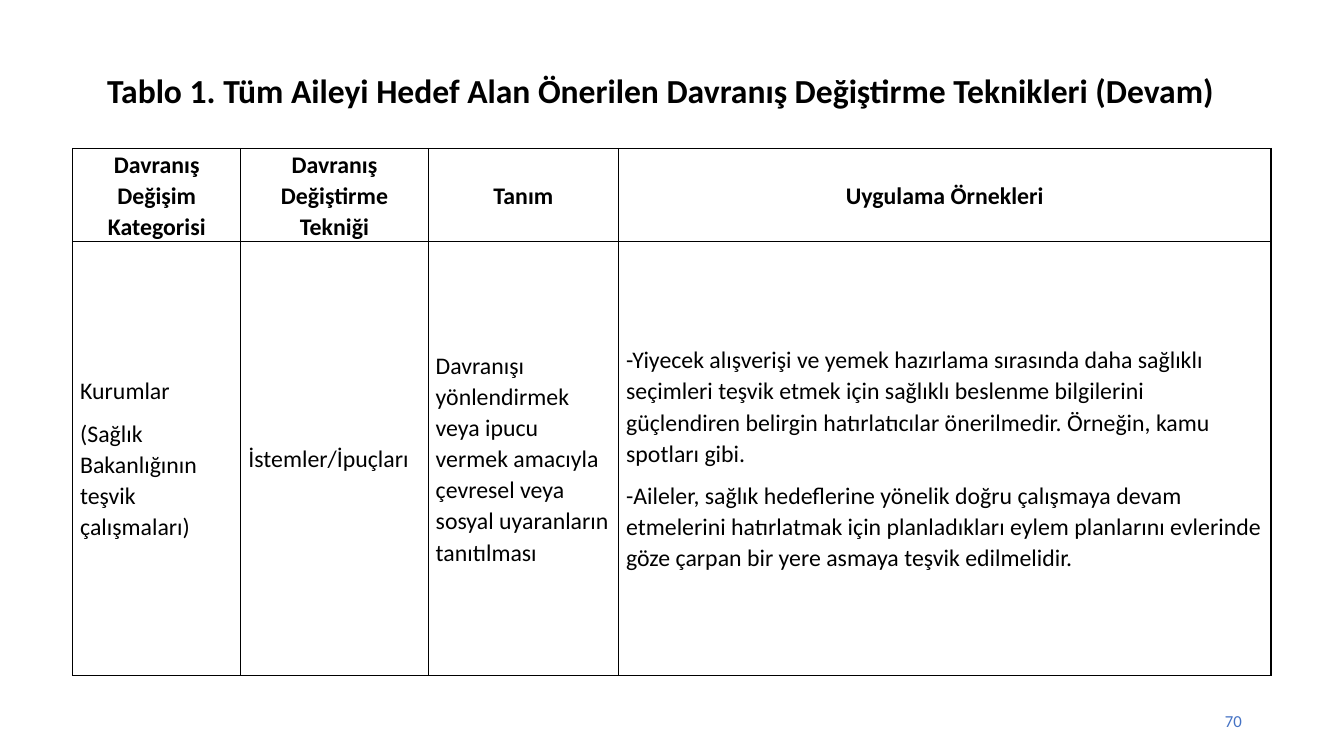
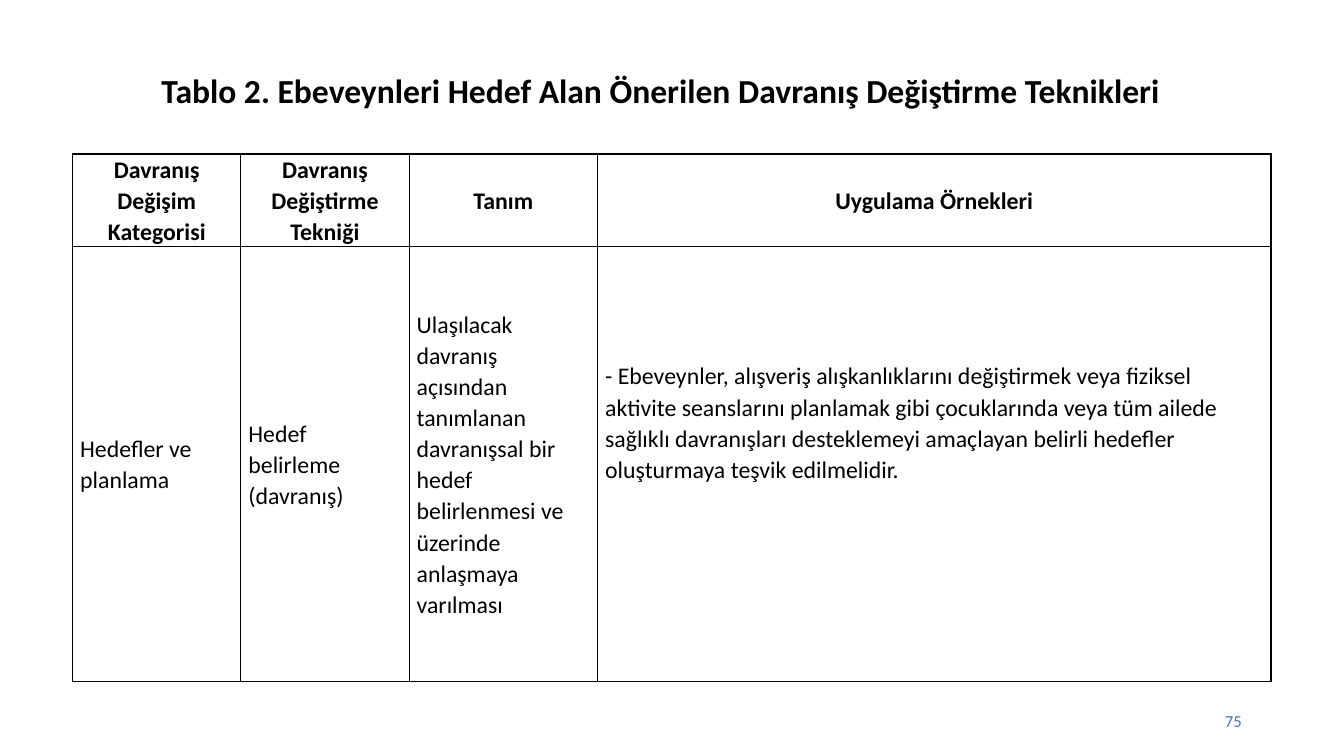
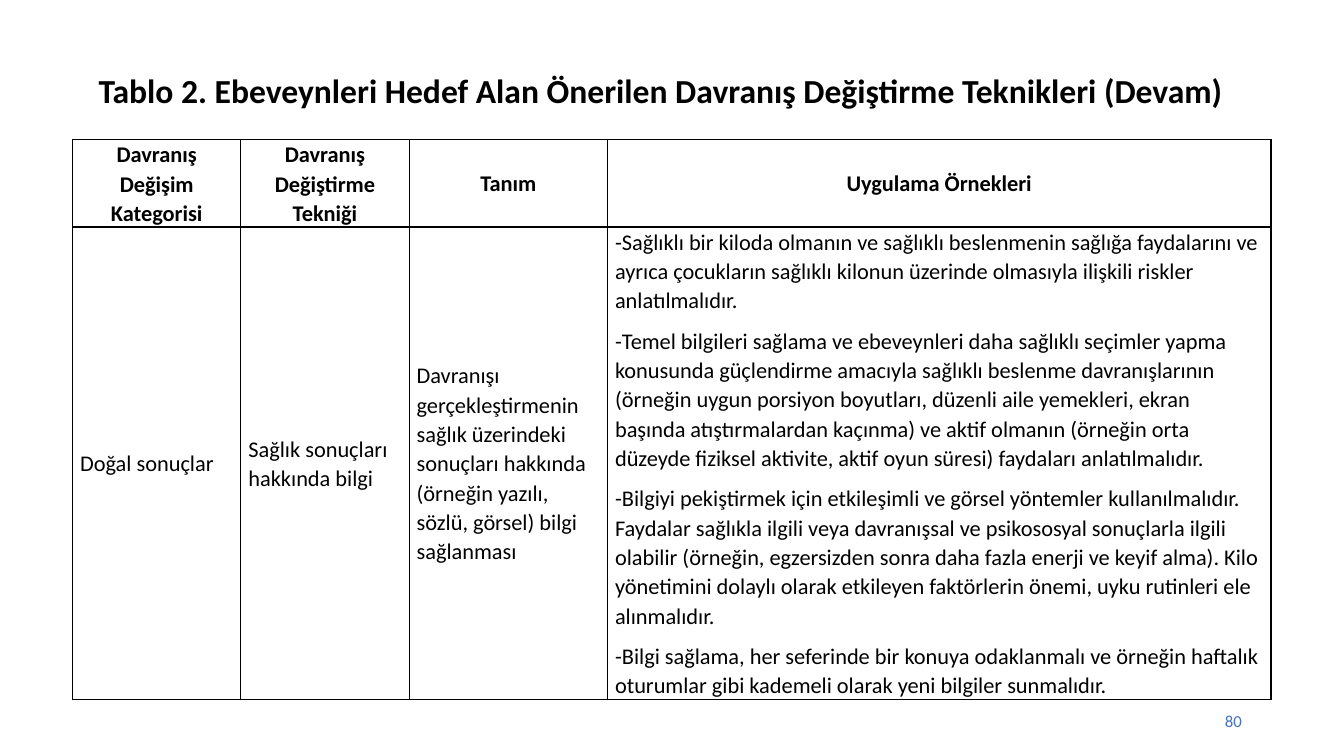
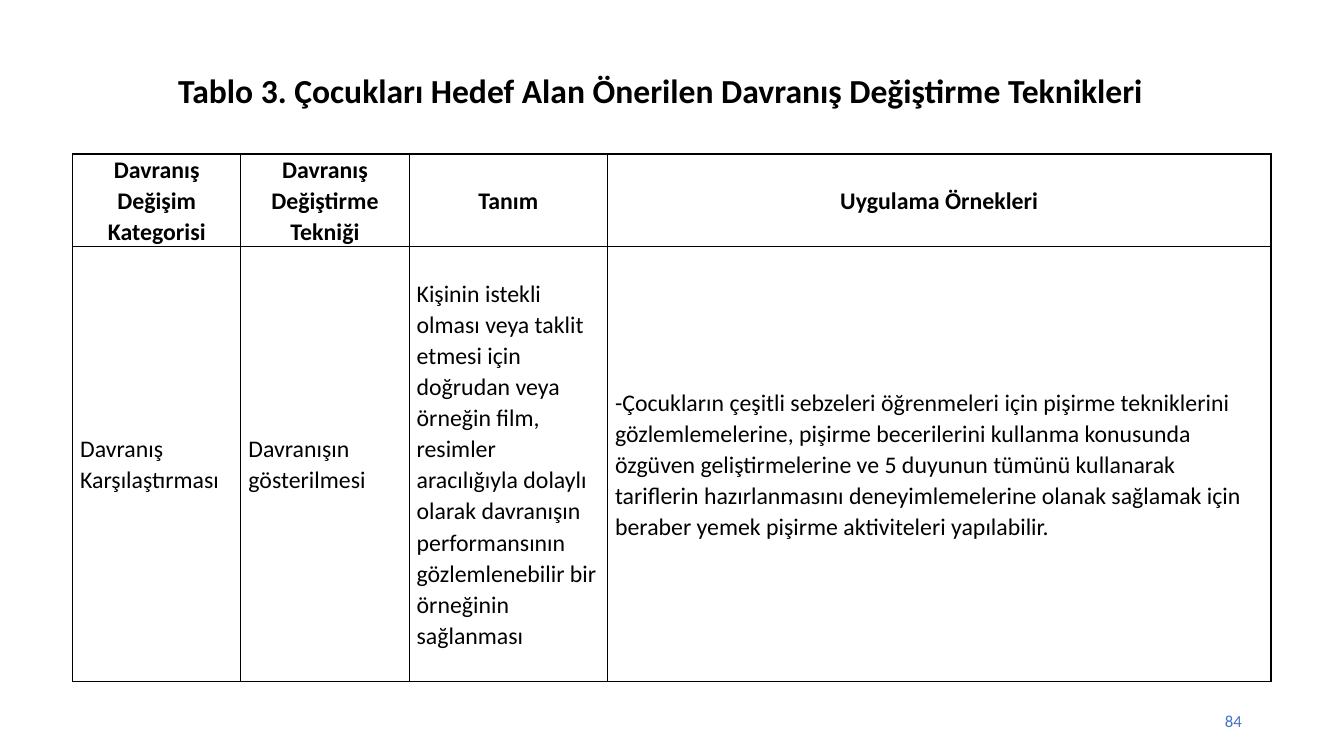
from lxml import etree
from pptx import Presentation
from pptx.dml.color import RGBColor
from pptx.enum.text import MSO_ANCHOR, PP_ALIGN
from pptx.oxml.ns import qn
from pptx.util import Cm, Pt

MIDDLE = MSO_ANCHOR.MIDDLE
LEFT, CENTER, RIGHT = PP_ALIGN.LEFT, PP_ALIGN.CENTER, PP_ALIGN.RIGHT

COLORS = {"text": "000000", "border": "000000", "page": "4472C4"}
FONT = "Calibri"
BORDER_WIDTH = Pt(1)
TABLE_LEFT, TABLE_WIDTH = 1.83, 30.2
SIDE_MARGIN = 0.19

HEADERS = [
    "Davranış Değişim Kategorisi",
    "Davranış Değiştirme Tekniği",
    "Tanım",
    "Uygulama Örnekleri",
]

SLIDES = [
    {
        "title": "Tablo 1. Tüm Aileyi Hedef Alan Önerilen Davranış Değiştirme Teknikleri (Devam)",
        "page": "70",
        "top": 3.74,
        "columns": [4.24, 4.72, 4.8],
        "body": [
            ["Kurumlar", "(Sağlık Bakanlığının teşvik çalışmaları)"],
            ["İstemler/İpuçları"],
            ["Davranışı yönlendirmek veya ipucu vermek amacıyla çevresel veya sosyal "
             "uyaranların tanıtılması"],
            ["-Yiyecek alışverişi ve yemek hazırlama sırasında daha sağlıklı seçimleri "
             "teşvik etmek için sağlıklı beslenme bilgilerini güçlendiren belirgin "
             "hatırlatıcılar önerilmedir. Örneğin, kamu spotları gibi.",
             "-Aileler, sağlık hedeflerine yönelik doğru çalışmaya devam etmelerini "
             "hatırlatmak için planladıkları eylem planlarını evlerinde göze çarpan bir "
             "yere asmaya teşvik edilmelidir."],
        ],
    },
    {
        "title": "Tablo 2. Ebeveynleri Hedef Alan Önerilen Davranış Değiştirme Teknikleri",
        "page": "75",
        "top": 3.88,
        "columns": [4.24, 4.24, 4.75],
        "examples_bottom": 2.1,
        "body": [
            ["Hedefler ve planlama"],
            ["Hedef belirleme (davranış)"],
            ["Ulaşılacak davranış açısından tanımlanan davranışsal bir hedef "
             "belirlenmesi ve üzerinde anlaşmaya varılması"],
            ["- Ebeveynler, alışveriş alışkanlıklarını değiştirmek veya fiziksel "
             "aktivite seanslarını planlamak gibi çocuklarında veya tüm ailede sağlıklı "
             "davranışları desteklemeyi amaçlayan belirli hedefler oluşturmaya teşvik "
             "edilmelidir."],
        ],
    },
    {
        "title": "Tablo 2. Ebeveynleri Hedef Alan Önerilen Davranış Değiştirme Teknikleri (Devam)",
        "page": "80",
        "top": 3.52,
        "columns": [4.24, 4.24, 5],
        "rows": [2.2, 11.9],
        "size": 16,
        "body": [
            ["Doğal sonuçlar"],
            ["Sağlık sonuçları hakkında bilgi"],
            ["Davranışı gerçekleştirmenin sağlık üzerindeki sonuçları hakkında "
             "(örneğin yazılı, sözlü, görsel) bilgi sağlanması"],
            ["-Sağlıklı bir kiloda olmanın ve sağlıklı beslenmenin sağlığa faydalarını "
             "ve ayrıca çocukların sağlıklı kilonun üzerinde olmasıyla ilişkili riskler "
             "anlatılmalıdır.",
             "-Temel bilgileri sağlama ve ebeveynleri daha sağlıklı seçimler yapma "
             "konusunda güçlendirme amacıyla sağlıklı beslenme davranışlarının (örneğin "
             "uygun porsiyon boyutları, düzenli aile yemekleri, ekran başında "
             "atıştırmalardan kaçınma) ve aktif olmanın (örneğin orta düzeyde fiziksel "
             "aktivite, aktif oyun süresi) faydaları anlatılmalıdır.",
             "-Bilgiyi pekiştirmek için etkileşimli ve görsel yöntemler kullanılmalıdır. "
             "Faydalar sağlıkla ilgili veya davranışsal ve psikososyal sonuçlarla ilgili "
             "olabilir (örneğin, egzersizden sonra daha fazla enerji ve keyif alma). "
             "Kilo yönetimini dolaylı olarak etkileyen faktörlerin önemi, uyku rutinleri "
             "ele alınmalıdır.",
             "-Bilgi sağlama, her seferinde bir konuya odaklanmalı ve örneğin haftalık "
             "oturumlar gibi kademeli olarak yeni bilgiler sunmalıdır."],
        ],
    },
    {
        "title": "Tablo 3. Çocukları Hedef Alan Önerilen Davranış Değiştirme Teknikleri",
        "page": "84",
        "top": 3.88,
        "columns": [4.24, 4.24, 5],
        "body": [
            ["Davranış Karşılaştırması"],
            ["Davranışın gösterilmesi"],
            ["Kişinin istekli olması veya taklit etmesi için doğrudan veya örneğin film, "
             "resimler aracılığıyla dolaylı olarak davranışın performansının "
             "gözlemlenebilir bir örneğinin sağlanması"],
            ["-Çocukların çeşitli sebzeleri öğrenmeleri için pişirme tekniklerini "
             "gözlemlemelerine, pişirme becerilerini kullanma konusunda özgüven "
             "geliştirmelerine ve 5 duyunun tümünü kullanarak tariflerin hazırlanmasını "
             "deneyimlemelerine olanak sağlamak için beraber yemek pişirme aktiviteleri "
             "yapılabilir."],
        ],
    },
]


def write(frame, paragraphs, size, align, color="text", bold=False, spacing=1.0, after=0):
    frame.word_wrap = True
    frame.text = "\n".join(paragraphs)
    for paragraph in frame.paragraphs:
        paragraph.alignment = align
        paragraph.line_spacing = spacing
        paragraph.space_after = Pt(after)
        for run in paragraph.runs:
            run.font.name = FONT
            run.font.size = Pt(size)
            run.font.bold = bold
            run.font.color.rgb = RGBColor.from_string(COLORS[color])


def add_label(slide, box, text, size, align, **style):
    frame = slide.shapes.add_textbox(*(Cm(length) for length in box)).text_frame
    write(frame, [text], size, align, **style)
    frame.vertical_anchor = MIDDLE


def add_borders(cell):
    properties = cell._tc.get_or_add_tcPr()
    for position, side in enumerate(("lnL", "lnR", "lnT", "lnB")):
        line = etree.Element(qn(f"a:{side}"), w=str(BORDER_WIDTH))
        fill = etree.SubElement(line, qn("a:solidFill"))
        etree.SubElement(fill, qn("a:srgbClr"), val=COLORS["border"])
        properties.insert(position, line)


def fill_cell(cell, paragraphs, size, align, **style):
    write(cell.text_frame, paragraphs, size, align, spacing=1.07, **style)
    cell.vertical_anchor = MIDDLE
    cell.margin_left = cell.margin_right = Cm(SIDE_MARGIN)
    cell.margin_top = cell.margin_bottom = 0
    cell.fill.background()
    add_borders(cell)


def add_techniques(slide, content):
    widths = content["columns"] + [TABLE_WIDTH - sum(content["columns"])]
    heights = content.get("rows", [2.34, 10.95])
    size = content.get("size", 17)
    table = slide.shapes.add_table(
        len(heights), len(widths), Cm(TABLE_LEFT), Cm(content["top"]),
        Cm(TABLE_WIDTH), Cm(sum(heights))).table
    table.first_row = table.horz_banding = False
    for row, height in zip(table.rows, heights):
        row.height = Cm(height)
    for index, (width, header, body) in enumerate(zip(widths, HEADERS, content["body"])):
        table.columns[index].width = Cm(width)
        fill_cell(table.cell(0, index), [header], size, CENTER, bold=True)
        fill_cell(table.cell(1, index), body, size, LEFT, after=8)
    examples = table.cell(1, len(widths) - 1)
    examples.margin_bottom = Cm(content.get("examples_bottom", 0))


def main():
    deck = Presentation()
    deck.slide_width, deck.slide_height = Cm(33.87), Cm(19.05)
    blank = deck.slide_layouts[6]
    for content in SLIDES:
        slide = deck.slides.add_slide(blank)
        add_label(slide, (1.55, 1.22, 30.2, 2.21), content["title"], 24, CENTER,
                  bold=True, spacing=0.9)
        add_techniques(slide, content)
        add_label(slide, (23.93, 17.65, 7.62, 1.02), content["page"], 12, RIGHT, color="page")
    deck.save("out.pptx")


if __name__ == "__main__":
    main()
